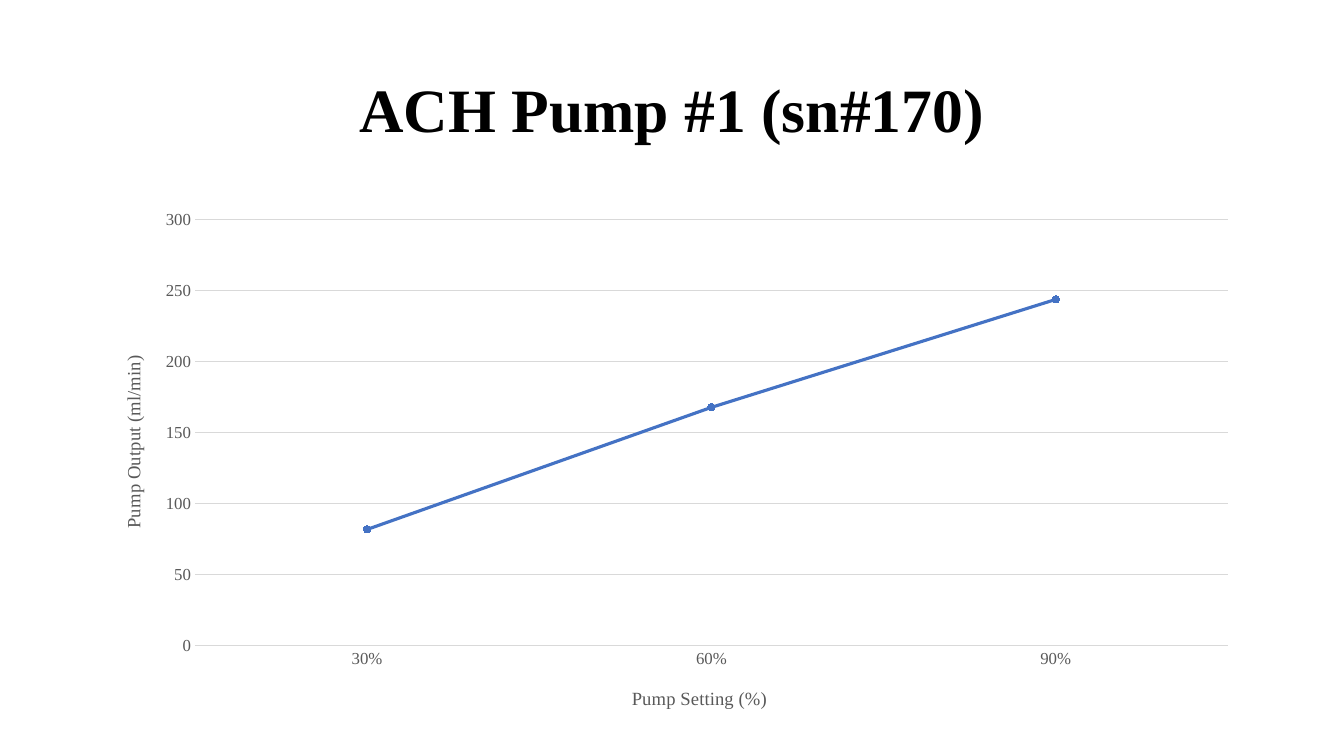
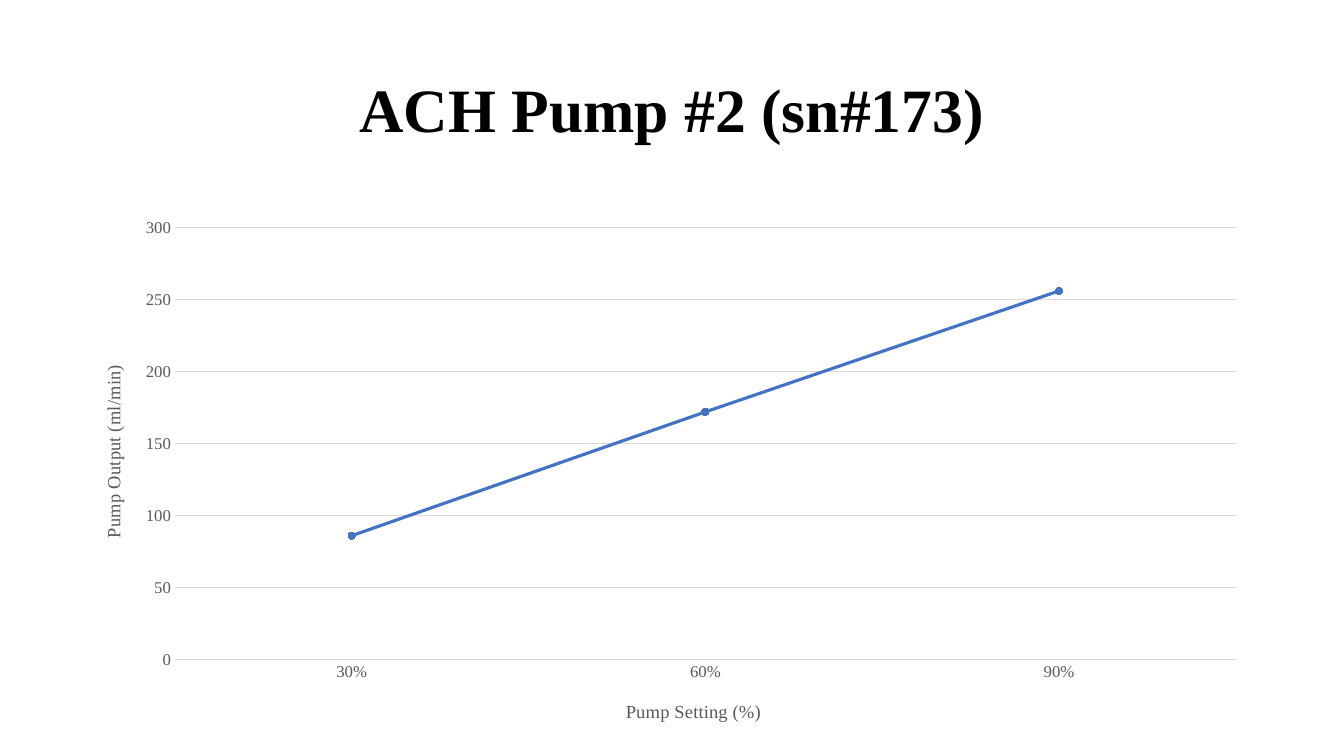
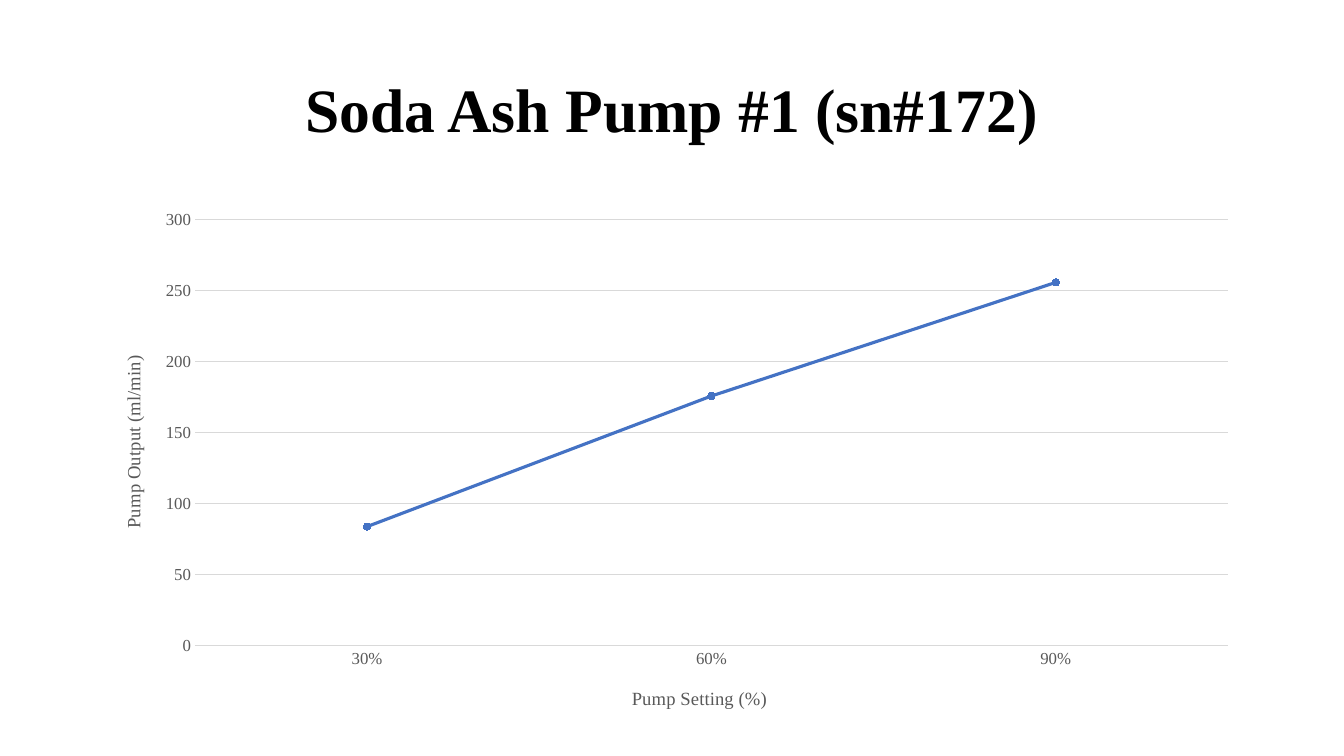
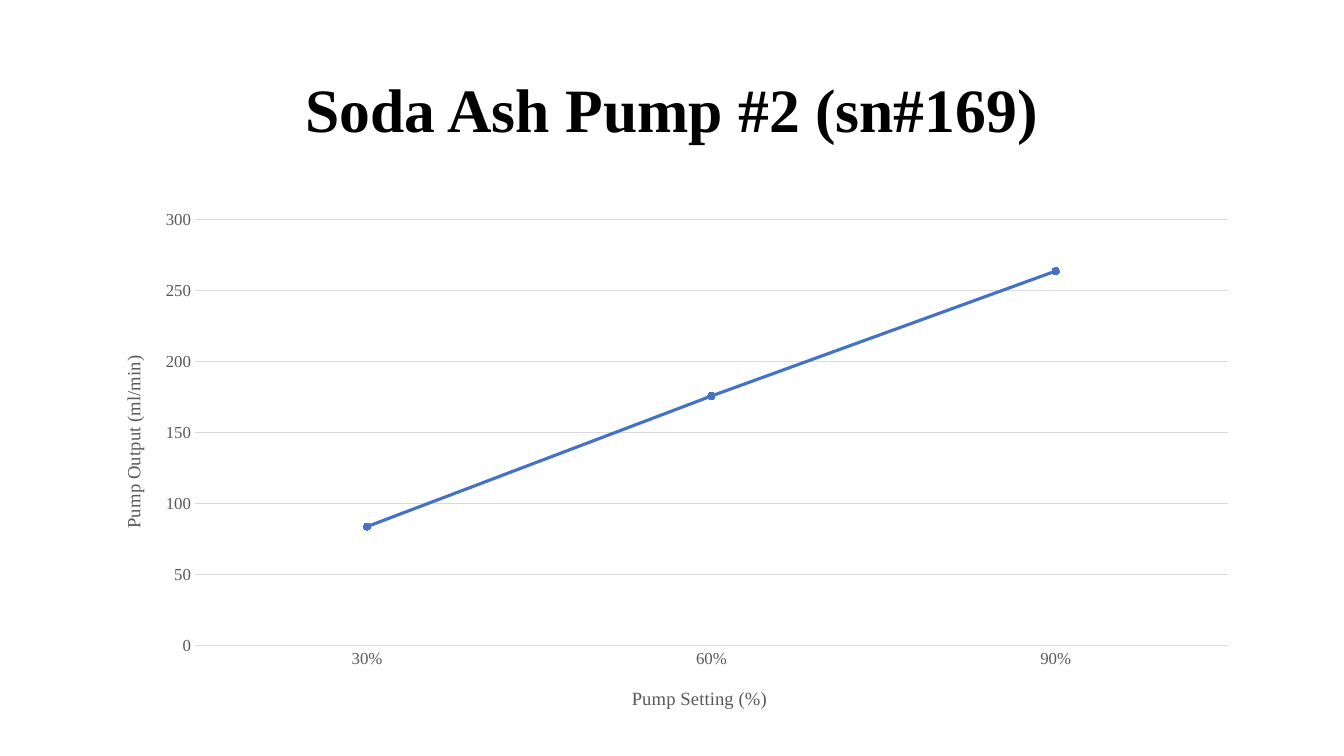
import dataclasses

import lxml.etree
import pptx
import pptx.chart.data
import pptx.dml.color
import pptx.enum.chart
import pptx.enum.text
import pptx.oxml.ns
import pptx.util

PX = 12192000 / 1344  # EMU in one px


@dataclasses.dataclass(frozen=True)
class Theme:
    font: str = "Times New Roman"
    title_color: str = "000000"
    label_color: str = "595959"
    grid_color: str = "D9D9D9"
    line_color: str = "4472C4"
    title_size: float = 44
    axis_title_size: float = 13.3
    tick_size: float = 12
    grid_width: float = 0.75
    line_width: float = 2.25
    marker_size: int = 5


theme = Theme()

# Lengths in px: left, top, width, height
TITLE = (92, 40, 1160, 146)
CHART = (92, 202, 1160, 526)
PLOT = (195, 220, 1033, 426)
WIDE_PLOT = (175, 228, 1061, 437)

SETTINGS = (0.3, 0.6, 0.9)
PUMPS = [
    ("ACH Pump #1 (sn#170)", (82, 168, 244), PLOT),
    ("ACH Pump #2 (sn#173)", (86, 172, 256), WIDE_PLOT),
    ("Soda Ash Pump #1 (sn#172)", (84, 176, 256), PLOT),
    ("Soda Ash Pump #2 (sn#169)", (84, 176, 264), PLOT),
]


def write_text(frame, text, size, color, bold=False, align=None, spacing=None):
    para = frame.paragraphs[0]
    para.alignment = align
    if spacing:
        para.line_spacing = spacing
    span = para.add_run()
    span.text = text
    span.font.name = theme.font
    span.font.size = pptx.util.Pt(size)
    span.font.bold = bold
    span.font.color.rgb = pptx.dml.color.RGBColor.from_string(color)


def place_part(part, index, left, top, width=None, height=None):
    """Fix the place of a chart part, given in slide px."""
    qn = pptx.oxml.ns.qn
    for old in part.findall(qn("c:layout")):
        part.remove(old)
    layout = lxml.etree.Element(qn("c:layout"))
    part.insert(index, layout)
    manual = lxml.etree.SubElement(layout, qn("c:manualLayout"))
    values = {"xMode": "edge", "yMode": "edge",
              "x": (left - CHART[0]) / CHART[2],
              "y": (top - CHART[1]) / CHART[3]}
    if width:
        values = {"layoutTarget": "inner", **values,
                  "w": width / CHART[2], "h": height / CHART[3]}
    for name, value in values.items():
        lxml.etree.SubElement(manual, qn("c:" + name)).set("val", str(value))


deck = pptx.Presentation()
deck.slide_width = pptx.util.Emu(round(1344 * PX))
deck.slide_height = pptx.util.Emu(round(756 * PX))
label_rgb = pptx.dml.color.RGBColor.from_string(theme.label_color)
grid_rgb = pptx.dml.color.RGBColor.from_string(theme.grid_color)
line_rgb = pptx.dml.color.RGBColor.from_string(theme.line_color)

for title, outputs, plot in PUMPS:
    page = deck.slides.add_slide(deck.slide_layouts[6])

    # Title
    box = page.shapes.add_textbox(*(round(length * PX) for length in TITLE))
    box.text_frame.word_wrap = True
    box.text_frame.vertical_anchor = pptx.enum.text.MSO_ANCHOR.MIDDLE
    write_text(box.text_frame, title, theme.title_size, theme.title_color,
               bold=True, align=pptx.enum.text.PP_ALIGN.CENTER, spacing=0.9)

    # Chart
    data = pptx.chart.data.CategoryChartData()
    data.categories = SETTINGS
    data.categories.number_format = "0%"
    data.add_series("Series 1", outputs)
    chart = page.shapes.add_chart(
        pptx.enum.chart.XL_CHART_TYPE.LINE_MARKERS_STACKED,
        *(round(length * PX) for length in CHART), data).chart
    chart.has_legend = False
    chart.has_title = False
    chart.font.name = theme.font
    chart.font.size = pptx.util.Pt(theme.tick_size)
    chart.font.color.rgb = label_rgb
    chart.plots[0].vary_by_categories = False

    # Series
    series = chart.plots[0].series[0]
    series.smooth = False
    series.format.line.color.rgb = line_rgb
    series.format.line.width = pptx.util.Pt(theme.line_width)
    series.marker.style = pptx.enum.chart.XL_MARKER_STYLE.CIRCLE
    series.marker.size = theme.marker_size
    series.marker.format.fill.solid()
    series.marker.format.fill.fore_color.rgb = line_rgb
    series.marker.format.line.color.rgb = line_rgb

    # Axes
    for axis, label in ((chart.category_axis, "Pump Setting (%)"),
                        (chart.value_axis, "Pump Output (ml/min)")):
        axis.major_tick_mark = pptx.enum.chart.XL_TICK_MARK.NONE
        axis.minor_tick_mark = pptx.enum.chart.XL_TICK_MARK.NONE
        write_text(axis.axis_title.text_frame, label,
                   theme.axis_title_size, theme.label_color)
    chart.category_axis.tick_labels.number_format = "0%"
    chart.category_axis.tick_labels.number_format_is_linked = False
    chart.value_axis.minimum_scale = 0
    chart.value_axis.maximum_scale = 300
    chart.value_axis.major_unit = 50
    chart.value_axis.has_major_gridlines = True
    chart.value_axis.format.line.fill.background()
    for line in (chart.category_axis.format.line,
                 chart.value_axis.major_gridlines.format.line):
        line.color.rgb = grid_rgb
        line.width = pptx.util.Pt(theme.grid_width)

    # Places of the plot and the axis titles
    left, top, width, height = plot
    space = chart._chartSpace
    place_part(space.xpath("c:chart/c:plotArea")[0], 0, *plot)
    place_part(space.xpath(".//c:catAx/c:title")[0], 1,
               left + width / 2 - 83, top + height + 37)
    value_title = space.xpath(".//c:valAx/c:title")[0]
    place_part(value_title, 1, left - 77, top + height / 2 - 81)
    body = value_title.find(".//" + pptx.oxml.ns.qn("a:bodyPr"))
    body.set("rot", "-5400000")
    body.set("vert", "horz")

deck.save("out.pptx")
